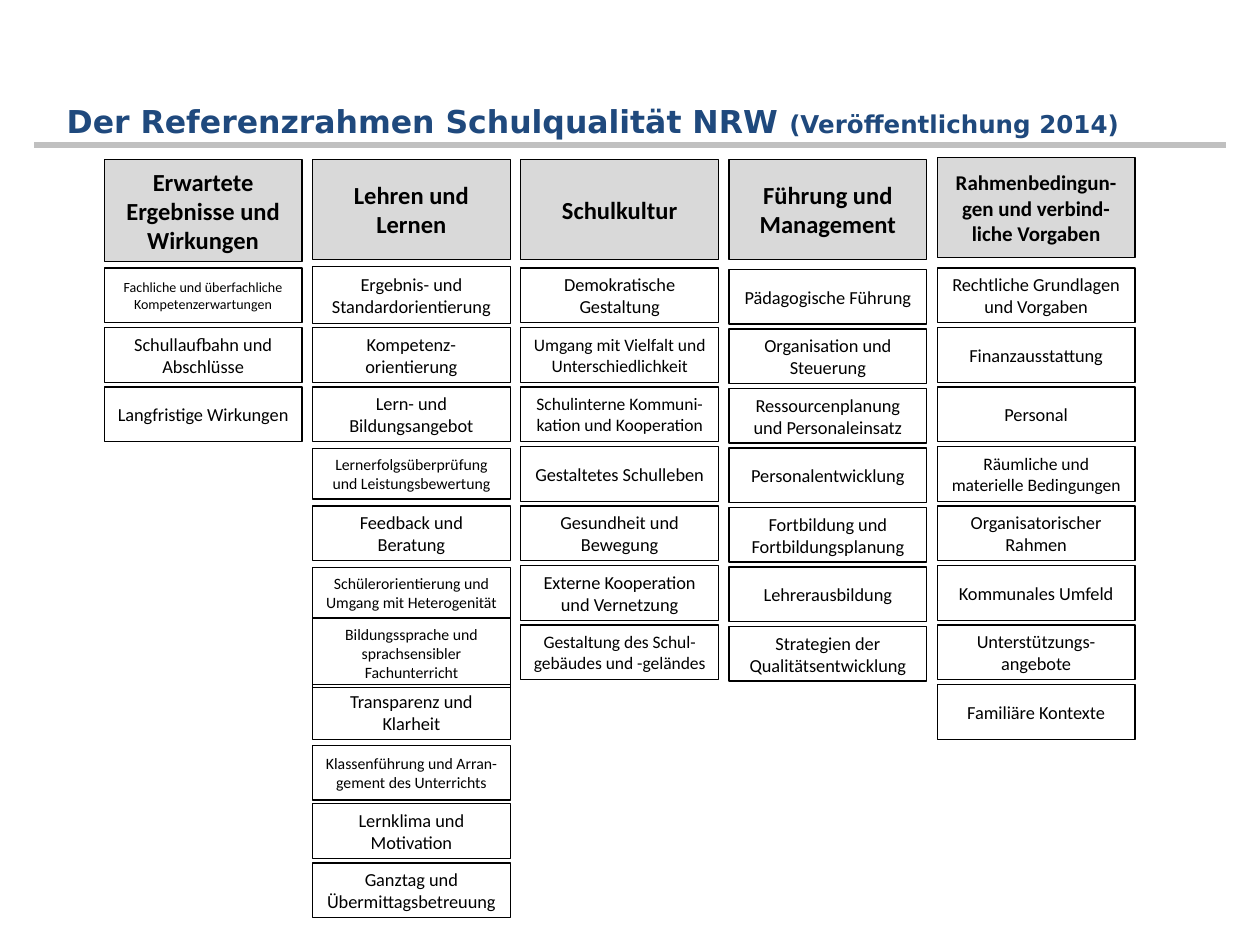
from dataclasses import dataclass

from lxml.etree import SubElement
from pptx import Presentation
from pptx.dml.color import RGBColor
from pptx.enum.shapes import MSO_CONNECTOR, MSO_SHAPE
from pptx.enum.text import MSO_ANCHOR, PP_ALIGN
from pptx.oxml.ns import qn
from pptx.slide import Slide
from pptx.text.text import _Paragraph
from pptx.util import Pt

BLACK = RGBColor(0x00, 0x00, 0x00)
HEADER_GREY = RGBColor(0xD9, 0xD9, 0xD9)
RULE_GREY = RGBColor(0xC0, 0xC0, 0xC0)
TITLE_BLUE = RGBColor(0x1F, 0x49, 0x7D)

BODY_FONT = "Calibri"
TITLE_FONT = "DejaVu Sans"

COLUMN_LEFT, COLUMN_PITCH, BOX_WIDTH = 59.6, 119, 113
HEADER_TOP = 91.2
ROW_TOP, ROW_PITCH = 153.2, 34


@dataclass(frozen=True)
class Item:
    """A criterion; shift moves it away from its regular row."""
    text: str
    size: float = 10.5
    height: float = 31.2
    shift: float = 0


@dataclass(frozen=True)
class Column:
    header: Item
    items: list[Item]
    shift: float = 0


COLUMNS = [
    Column(Item("Erwartete Ergebnisse und Wirkungen", 14, 58.4), [
        Item("Fachliche und überfachliche Kompetenzerwartungen", 8),
        Item("Schullaufbahn und Abschlüsse"),
        Item("Langfristige Wirkungen"),
    ]),
    Column(Item("Lehren und Lernen", 14, 57), [
        Item("Ergebnis- und Standardorientierung", height=32.4, shift=-0.8),
        Item("Kompetenz-orientierung"),
        Item("Lern- und Bildungsangebot"),
        Item("Lernerfolgsüberprüfung und Leistungsbewertung", 9, 29, 1),
        Item("Feedback und Beratung"),
        Item("Schülerorientierung und Umgang mit Heterogenität", 9, 29, 1),
        Item("Bildungssprache und sprachsensibler Fachunterricht", 9, 40, -4.2),
        Item("Transparenz und Klarheit"),
        Item("Klassenführung und Arran-gement des Unterrichts", 9, shift=0.8),
        Item("Lernklima und Motivation"),
        Item("Ganztag und Übermittagsbetreuung"),
    ]),
    Column(Item("Schulkultur", 14, 57), [
        Item("Demokratische Gestaltung"),
        Item("Umgang mit Vielfalt und Unterschiedlichkeit", 10),
        Item("Schulinterne Kommuni-kation und Kooperation", 10),
        Item("Gestaltetes Schulleben"),
        Item("Gesundheit und Bewegung"),
        Item("Externe Kooperation und Vernetzung"),
        Item("Gestaltung des Schul-gebäudes und -geländes", 10),
    ]),
    Column(Item("Führung und Management", 14, 57), [
        Item("Pädagogische Führung"),
        Item("Organisation und Steuerung"),
        Item("Ressourcenplanung und Personaleinsatz"),
        Item("Personalentwicklung"),
        Item("Fortbildung und Fortbildungsplanung"),
        Item("Lehrerausbildung"),
        Item("Strategien der Qualitätsentwicklung"),
    ], shift=0.8),
    Column(Item("Rahmenbedingun-gen und verbind-liche Vorgaben", 12, 57, -1), [
        Item("Rechtliche Grundlagen und Vorgaben"),
        Item("Finanzausstattung"),
        Item("Personal"),
        Item("Räumliche und materielle Bedingungen", 10),
        Item("Organisatorischer Rahmen"),
        Item("Kommunales Umfeld"),
        Item("Unterstützungs-angebote"),
        Item("Familiäre Kontexte"),
    ]),
]


def add_span(para: _Paragraph, text: str, font: str, size: float,
             color: RGBColor, bold: bool) -> None:
    span = para.add_run()
    span.text = text
    span.font.name = font
    span.font.size = Pt(size)
    span.font.bold = bold
    span.font.color.rgb = color


def add_box(page: Slide, item: Item, left: float, top: float,
            is_header: bool = False) -> None:
    box = page.shapes.add_shape(MSO_SHAPE.RECTANGLE, Pt(left), Pt(top + item.shift),
                                Pt(BOX_WIDTH), Pt(item.height))
    box.shadow.inherit = False
    if is_header:
        box.fill.solid()
        box.fill.fore_color.rgb = HEADER_GREY
    else:
        box.fill.background()
    box.line.color.rgb = BLACK
    box.line.width = Pt(0.75)
    frame = box.text_frame
    frame.word_wrap = True
    frame.vertical_anchor = MSO_ANCHOR.MIDDLE
    frame.margin_top = frame.margin_bottom = Pt(0)
    para = frame.paragraphs[0]
    para.alignment = PP_ALIGN.CENTER
    add_span(para, item.text, BODY_FONT, item.size, BLACK, is_header)


def add_column(page: Slide, column: Column, left: float) -> None:
    add_box(page, column.header, left, HEADER_TOP, is_header=True)
    for row, item in enumerate(column.items):
        add_box(page, item, left, ROW_TOP + column.shift + row * ROW_PITCH)


def add_title_rule(page: Slide) -> None:
    rule = page.shapes.add_connector(MSO_CONNECTOR.STRAIGHT, Pt(19.6), Pt(82.8),
                                     Pt(700.4), Pt(82.8))
    rule.line.color.rgb = RULE_GREY
    rule.line.width = Pt(3)
    SubElement(rule._element.spPr, qn("a:effectLst"))


def add_title(page: Slide) -> None:
    box = page.shapes.add_textbox(Pt(31), Pt(54.8), Pt(648), Pt(90))
    box.text_frame.word_wrap = True
    para = box.text_frame.paragraphs[0]
    add_span(para, "Der Referenzrahmen Schulqualität NRW ", TITLE_FONT, 18, TITLE_BLUE, True)
    add_span(para, "(Veröffentlichung 2014)", TITLE_FONT, 14, TITLE_BLUE, True)


def main() -> None:
    deck = Presentation()
    deck.slide_width, deck.slide_height = Pt(720), Pt(540)
    page = deck.slides.add_slide(deck.slide_layouts[6])
    add_title_rule(page)
    for index, column in enumerate(COLUMNS):
        add_column(page, column, COLUMN_LEFT + index * COLUMN_PITCH)
    add_title(page)
    deck.save("out.pptx")


if __name__ == "__main__":
    main()
